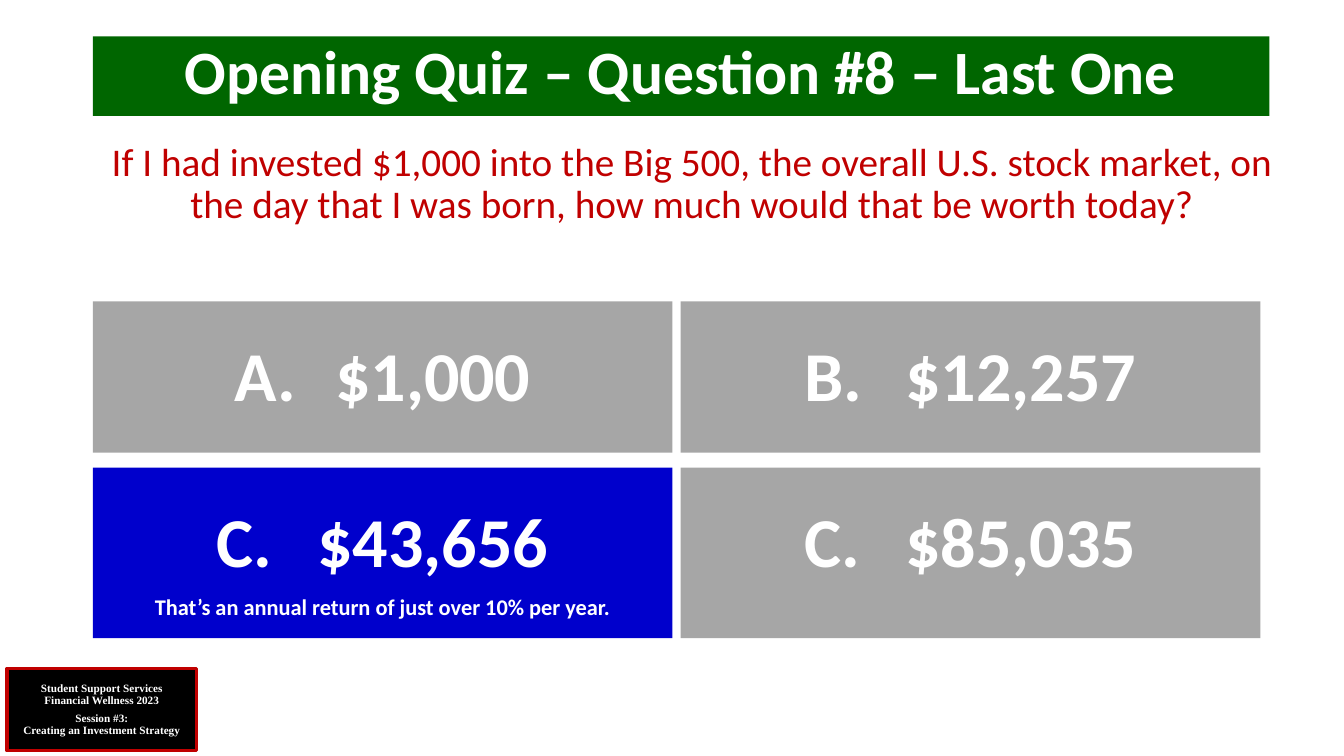
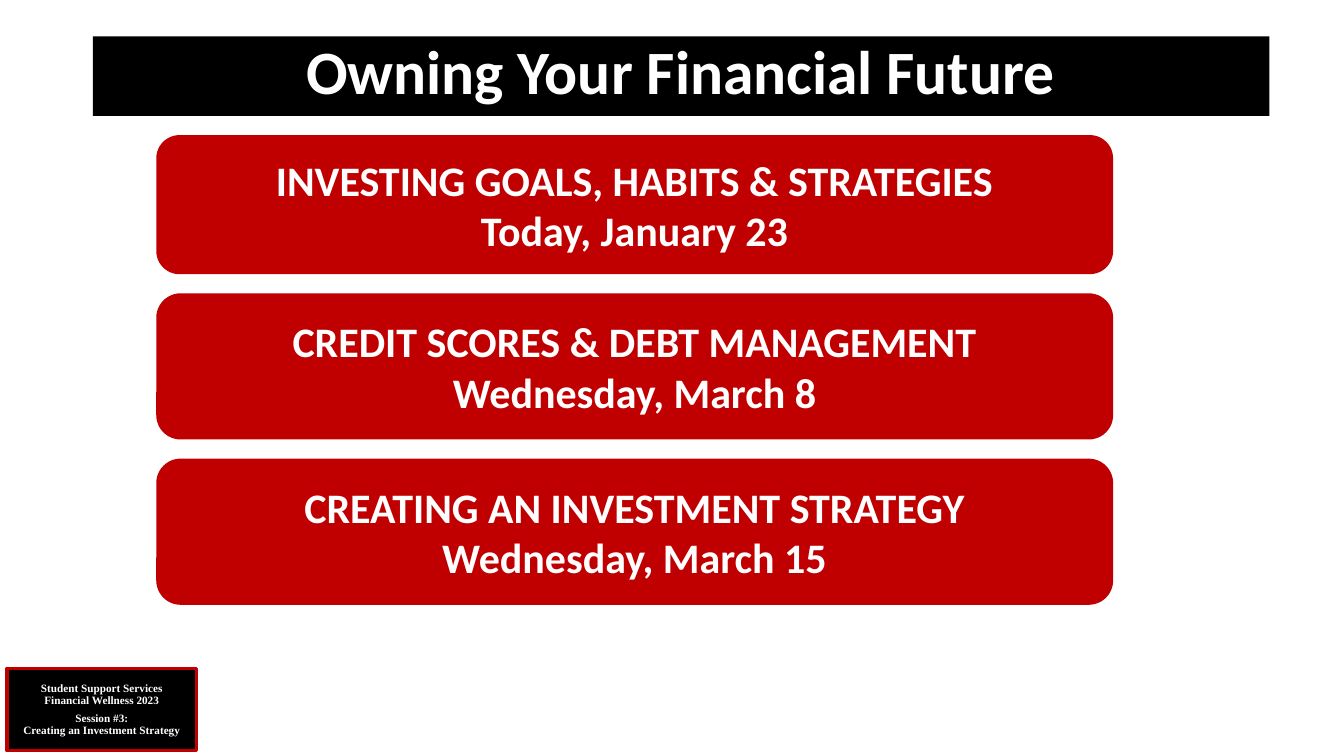
import pptx
import pptx.util
import pptx.dml.color
import pptx.enum.shapes
import pptx.enum.text
import lxml.etree

# Shared look
PX = 9144  # 100 px to the inch
WHITE, BLACK, RED = "FFFFFF", "000000", "C00000"
GREEN, BLUE, GRAY = "006600", "0000CC", "A6A6A6"
SANS, SERIF = "Calibri", "Times New Roman"
LEFT = 92
TITLE_BOX = (LEFT, 36, 1167, 79)
SHAPE = pptx.enum.shapes.MSO_SHAPE
ANCHOR = pptx.enum.text.MSO_ANCHOR


def color(code):
    return pptx.dml.color.RGBColor.from_string(code)


def place(shape, box):
    shape.left, shape.top, shape.width, shape.height = [v * PX for v in box]


def paint(shape, fill, line=None):
    shape.fill.solid()
    shape.fill.fore_color.rgb = color(fill)
    if line:
        shape.line.color.rgb = color(line)
        shape.line.width = pptx.util.Pt(2.25)
    else:
        shape.line.fill.background()


def add_box(slide, kind, box, fill, line=None):
    shape = slide.shapes.add_shape(kind, *[v * PX for v in box])
    shape.shadow.inherit = False
    paint(shape, fill, line)
    return shape


def write(shape, lines, size, tone=WHITE, font=SANS, bold=True,
          lead=0.9, anchor=ANCHOR.TOP):
    """Write centred lines: each is text, or (text, size, space before)."""
    frame = shape.text_frame
    frame.word_wrap = True
    frame.auto_size = pptx.enum.text.MSO_AUTO_SIZE.NONE
    frame.vertical_anchor = anchor
    for i, line in enumerate(lines):
        text, points, gap = (line, size, 0) if isinstance(line, str) else line
        para = frame.add_paragraph() if i else frame.paragraphs[0]
        para.alignment = pptx.enum.text.PP_ALIGN.CENTER
        para.line_spacing = lead
        para.space_before = pptx.util.Pt(gap)
        for j, part in enumerate(text.split("\n")):
            if j:
                para.add_line_break()
            run = para.add_run()
            run.text = part
            run.font.name = font
            run.font.size = pptx.util.Pt(points)
            run.font.bold = bold
            run.font.color.rgb = color(tone)
    return frame


def set_bullet(para, indent, tag, **attrs):
    """Give a paragraph a hanging indent in px and a bullet element."""
    props = para._p.get_or_add_pPr()
    props.set("marL", str(indent * PX))
    props.set("indent", str(-indent * PX))
    bullet = lxml.etree.SubElement(props, pptx.oxml.ns.qn(tag))
    for key, value in attrs.items():
        bullet.set(key, value)


def add_slide(deck, layout, title, fill):
    slide = deck.slides.add_slide(deck.slide_layouts[layout])
    head = slide.shapes.title
    place(head, TITLE_BOX)
    paint(head, fill)
    write(head, [title], 44)
    return slide


def add_badge(deck, slide):
    """Draw the session badge and move it to the master."""
    badge = add_box(slide, SHAPE.RECTANGLE, (7, 663, 188, 82), BLACK, RED)
    write(badge, ["Student Support Services", "Financial Wellness 2023",
                  ("Session #3:\nCreating an Investment Strategy", 8, 4)],
          8, font=SERIF, anchor=ANCHOR.MIDDLE)
    badge.element.nvSpPr.cNvPr.id = 20
    deck.slide_master.shapes.element.append(badge.element)


def add_answer(slide, box, letter, sum_text, fill, note=None):
    shape = add_box(slide, SHAPE.RECTANGLE, box, fill)
    lines = [sum_text] + ([(note, 16, 10)] if note else [])
    frame = write(shape, lines, 50)
    frame.margin_top = 39 * PX
    start = "ABCD".index(letter) + 1
    set_bullet(frame.paragraphs[0], 100, "a:buAutoNum",
               type="alphaUcPeriod", startAt=str(start))


def fill_quiz(slide):
    body = slide.placeholders[1]
    place(body, (LEFT, 136, 1188, 150))
    frame = write(body, ["If I had invested $1,000 into the Big 500, the overall "
                         "U.S. stock market, on the day that I was born, how much "
                         "would that be worth today?"], 28, RED, bold=False)
    set_bullet(frame.paragraphs[0], 0, "a:buNone")

    # Answer grid
    wide, gap = 575, 8
    rows = [
        (299, 150, [("A", "$1,000", GRAY), ("B", "$12,257", GRAY)]),
        (464, 169, [("C", "$43,656", BLUE,
                     "That’s an annual return of just over 10% per year."),
                    ("C", "$85,035", GRAY)]),
    ]
    for top, high, cells in rows:
        for col, cell in enumerate(cells):
            add_answer(slide, (LEFT + col * (wide + gap), top, wide, high), *cell)


def fill_dates(slide):
    top, gap = 134, 19
    for high, topic, day in [
        (138, "INVESTING GOALS, HABITS & STRATEGIES", "Today, January 23"),
        (145, "CREDIT SCORES & DEBT MANAGEMENT", "Wednesday, March 8"),
        (145, "CREATING AN INVESTMENT STRATEGY", "Wednesday, March 15"),
    ]:
        card = add_box(slide, SHAPE.ROUNDED_RECTANGLE, (155, top, 949, high), RED)
        write(card, [topic, day], 30, lead=1.0, anchor=ANCHOR.MIDDLE)
        top += high + gap


def main():
    deck = pptx.Presentation()
    deck.slide_width, deck.slide_height = 1333 * PX, 750 * PX
    quiz = add_slide(deck, 1, "Opening Quiz – Question #8 – Last One", GREEN)
    add_badge(deck, quiz)
    fill_quiz(quiz)
    fill_dates(add_slide(deck, 5, "Owning Your Financial Future", BLACK))
    deck.save("out.pptx")


if __name__ == "__main__":
    main()
